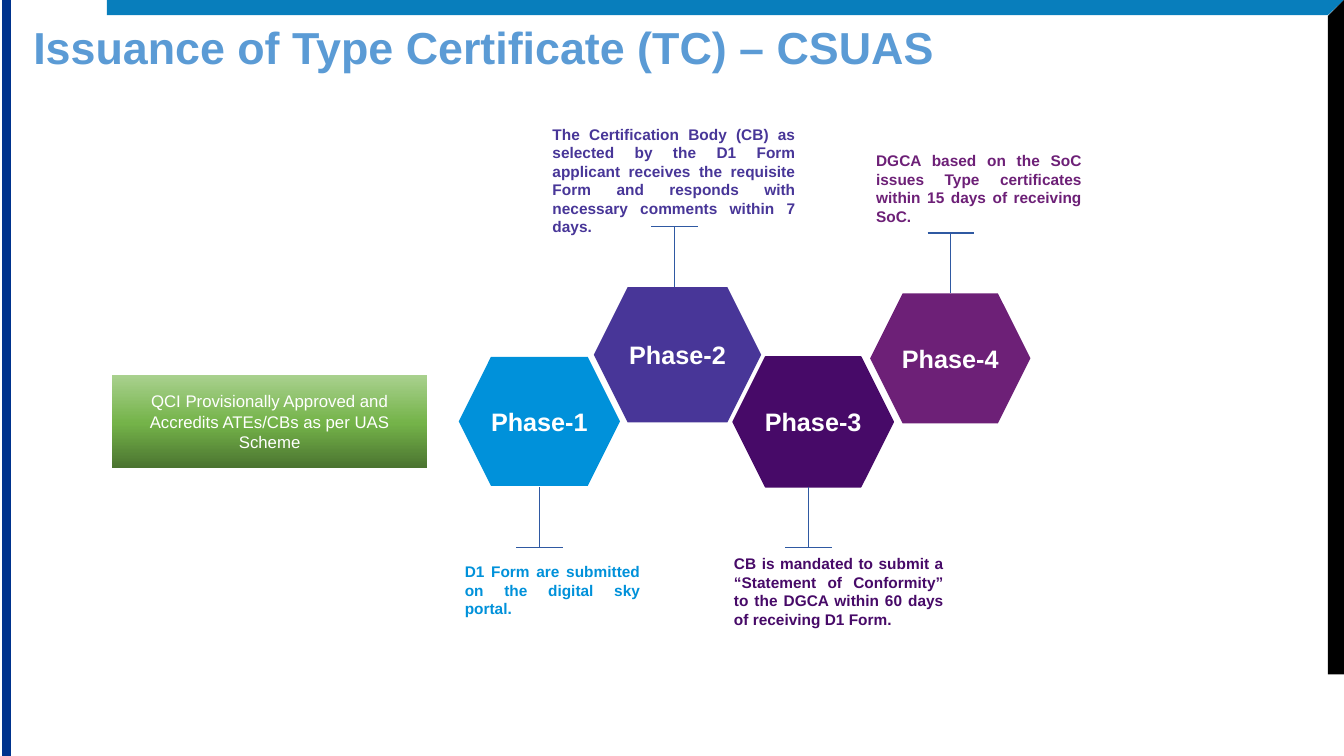
from copy import deepcopy
from dataclasses import dataclass

from pptx import Presentation
from pptx.dml.color import RGBColor
from pptx.enum.shapes import MSO_CONNECTOR, MSO_SHAPE
from pptx.enum.text import MSO_ANCHOR, MSO_AUTO_SIZE, PP_ALIGN
from pptx.oxml.ns import qn
from pptx.shapes.autoshape import Shape
from pptx.slide import Slide
from pptx.text.text import TextFrame
from pptx.util import Emu, Pt

RECTANGLE, HEXAGON = MSO_SHAPE.RECTANGLE, MSO_SHAPE.HEXAGON
STRAIGHT = MSO_CONNECTOR.STRAIGHT
TOP, MIDDLE = MSO_ANCHOR.TOP, MSO_ANCHOR.MIDDLE
LEFT, CENTER, JUSTIFY = PP_ALIGN.LEFT, PP_ALIGN.CENTER, PP_ALIGN.JUSTIFY

EMU_PER_PX = 9144  # 100 px to the inch
SLIDE_WIDTH, SLIDE_HEIGHT = 1333, 750
STEM_LENGTH, CAP_HALF_WIDTH = 60, 23


@dataclass(frozen=True)
class Theme:
    font: str = "Arial"
    title: str = "5B9BD5"
    top_bar: str = "087EBC"
    right_bar: str = "000000"
    left_bar: str = "00338D"
    connector: str = "2F59A2"
    white: str = "FFFFFF"
    approval_gradient: tuple[tuple[float, str], ...] = (
        (0, "4B7430"), (0.48, "74B349"), (1, "A9D18E"))
    title_size: int = 32
    phase_size: int = 18
    approval_size: int = 12
    caption_size: int = 11


@dataclass(frozen=True)
class Box:
    left: int
    top: int
    width: int
    height: int

    def emu(self) -> tuple[Emu, Emu, Emu, Emu]:
        return px(self.left), px(self.top), px(self.width), px(self.height)


@dataclass(frozen=True)
class Phase:
    name: str
    color: str
    hexagon: Box
    stem_x: int
    cap_y: int
    caption_box: Box
    caption: str
    outlined: bool = False


THEME = Theme()

PHASES = (
    Phase("Phase-1", "0091DA", Box(455, 354, 160, 128), 535, 543,
          Box(455, 552, 186, 85),
          "D1 Form are submitted on the digital sky portal."),
    Phase("Phase-2", "483698", Box(589, 285, 166, 134), 669, 225,
          Box(542, 118, 253, 81),
          "The Certification Body (CB) as selected by the D1 Form applicant "
          "receives the requisite Form and responds with necessary comments "
          "within 7 days."),
    Phase("Phase-3", "470A68", Box(727, 354, 159, 129), 802, 543,
          Box(722, 544, 220, 134),
          "CB is mandated to submit a “Statement of Conformity” to the DGCA "
          "within 60 days of receiving D1 Form.", outlined=True),
    Phase("Phase-4", "6D2077", Box(863, 291, 159, 129), 943, 231,
          Box(863, 144, 216, 85),
          "DGCA based on the SoC issues Type certificates within 15 days of "
          "receiving SoC."),
)


def px(length: int) -> Emu:
    return Emu(length * EMU_PER_PX)


def rgb(color: str) -> RGBColor:
    return RGBColor.from_string(color)


def paint(shape: Shape, color: str, outlined: bool = False) -> None:
    shape.shadow.inherit = False
    shape.fill.solid()
    shape.fill.fore_color.rgb = rgb(color)
    if outlined:
        shape.line.color.rgb = rgb(color)
        shape.line.width = Pt(1)
    else:
        shape.line.fill.background()


def write(frame: TextFrame, text: str, size: int, color: str, align: PP_ALIGN,
          anchor: MSO_ANCHOR, bold: bool = True,
          inset_x: int = 6, inset_y: int = 6) -> None:
    frame.word_wrap = True
    frame.auto_size = MSO_AUTO_SIZE.NONE
    frame.vertical_anchor = anchor
    frame.margin_left = frame.margin_right = px(inset_x)
    frame.margin_top = frame.margin_bottom = px(inset_y)
    frame.text = text
    paragraph = frame.paragraphs[0]
    paragraph.alignment = align
    font = paragraph.font
    font.name, font.size, font.bold = THEME.font, Pt(size), bold
    font.color.rgb = rgb(color)


def add_bevelled_bar(slide: Slide, corners: list[tuple[int, int]], color: str) -> None:
    builder = slide.shapes.build_freeform(*corners[0], scale=EMU_PER_PX)
    builder.add_line_segments(corners[1:], close=True)
    paint(builder.convert_to_shape(), color)


def add_frame_bars(slide: Slide) -> None:
    add_bevelled_bar(slide, [(106, 0), (1333, 0), (1317, 15), (106, 15)], THEME.top_bar)
    add_bevelled_bar(slide, [(1333, 0), (1333, 669), (1317, 669), (1317, 16)],
                     THEME.right_bar)
    left_bar = slide.shapes.add_shape(RECTANGLE, *Box(3, 0, 7, SLIDE_HEIGHT).emu())
    paint(left_bar, THEME.left_bar, outlined=True)


def add_title(slide: Slide) -> None:
    title = slide.shapes.title
    title.left, title.top, title.width, title.height = Box(33, 27, 1092, 45).emu()
    write(title.text_frame, "Issuance of Type Certificate (TC) – CSUAS",
          THEME.title_size, THEME.title, LEFT, MIDDLE, inset_x=0, inset_y=0)
    title.text_frame.paragraphs[0].line_spacing = 0.9


def add_approval(slide: Slide) -> None:
    approval = slide.shapes.add_shape(RECTANGLE, *Box(111, 372, 313, 92).emu())
    approval.shadow.inherit = False
    approval.line.fill.background()
    approval.fill.gradient()
    approval.fill.gradient_angle = 90
    stop_list = next(approval.element.iter(qn("a:gsLst")))
    stop_list.append(deepcopy(stop_list[0]))
    for stop, (position, color) in zip(approval.fill.gradient_stops,
                                       THEME.approval_gradient):
        stop.position = position
        stop.color.rgb = rgb(color)
    write(approval.text_frame,
          "QCI Provisionally Approved and Accredits ATEs/CBs as per UAS Scheme",
          THEME.approval_size, THEME.white, CENTER, MIDDLE, bold=False,
          inset_x=10, inset_y=5)


def add_line(slide: Slide, x1: int, y1: int, x2: int, y2: int) -> None:
    line = slide.shapes.add_connector(STRAIGHT, px(x1), px(y1), px(x2), px(y2))
    line.line.color.rgb = rgb(THEME.connector)
    line.line.width = Pt(1)
    properties = line.element.spPr
    properties.append(properties.makeelement(qn("a:effectLst"), {}))


def add_phase(slide: Slide, phase: Phase) -> None:
    """Draw a hexagon, its T-shaped pointer and the caption it points to."""
    hexagon = slide.shapes.add_shape(HEXAGON, *phase.hexagon.emu())
    paint(hexagon, phase.color, phase.outlined)
    write(hexagon.text_frame, phase.name, THEME.phase_size, THEME.white, CENTER, MIDDLE)

    points_up = phase.cap_y < phase.hexagon.top
    stem_end = phase.cap_y + (STEM_LENGTH if points_up else -STEM_LENGTH)
    add_line(slide, phase.stem_x, phase.cap_y, phase.stem_x, stem_end)
    add_line(slide, phase.stem_x - CAP_HALF_WIDTH, phase.cap_y,
             phase.stem_x + CAP_HALF_WIDTH, phase.cap_y)

    caption = slide.shapes.add_textbox(*phase.caption_box.emu())
    write(caption.text_frame, phase.caption, THEME.caption_size, phase.color,
          JUSTIFY, TOP)
    caption.text_frame.paragraphs[0].space_after = Pt(6)


def main() -> None:
    presentation = Presentation()
    presentation.slide_width = px(SLIDE_WIDTH)
    presentation.slide_height = px(SLIDE_HEIGHT)
    title_only = presentation.slide_layouts.get_by_name("Title Only")
    slide = presentation.slides.add_slide(title_only)
    add_frame_bars(slide)
    add_title(slide)
    add_approval(slide)
    for phase in PHASES:
        add_phase(slide, phase)
    presentation.save("out.pptx")


if __name__ == "__main__":
    main()
